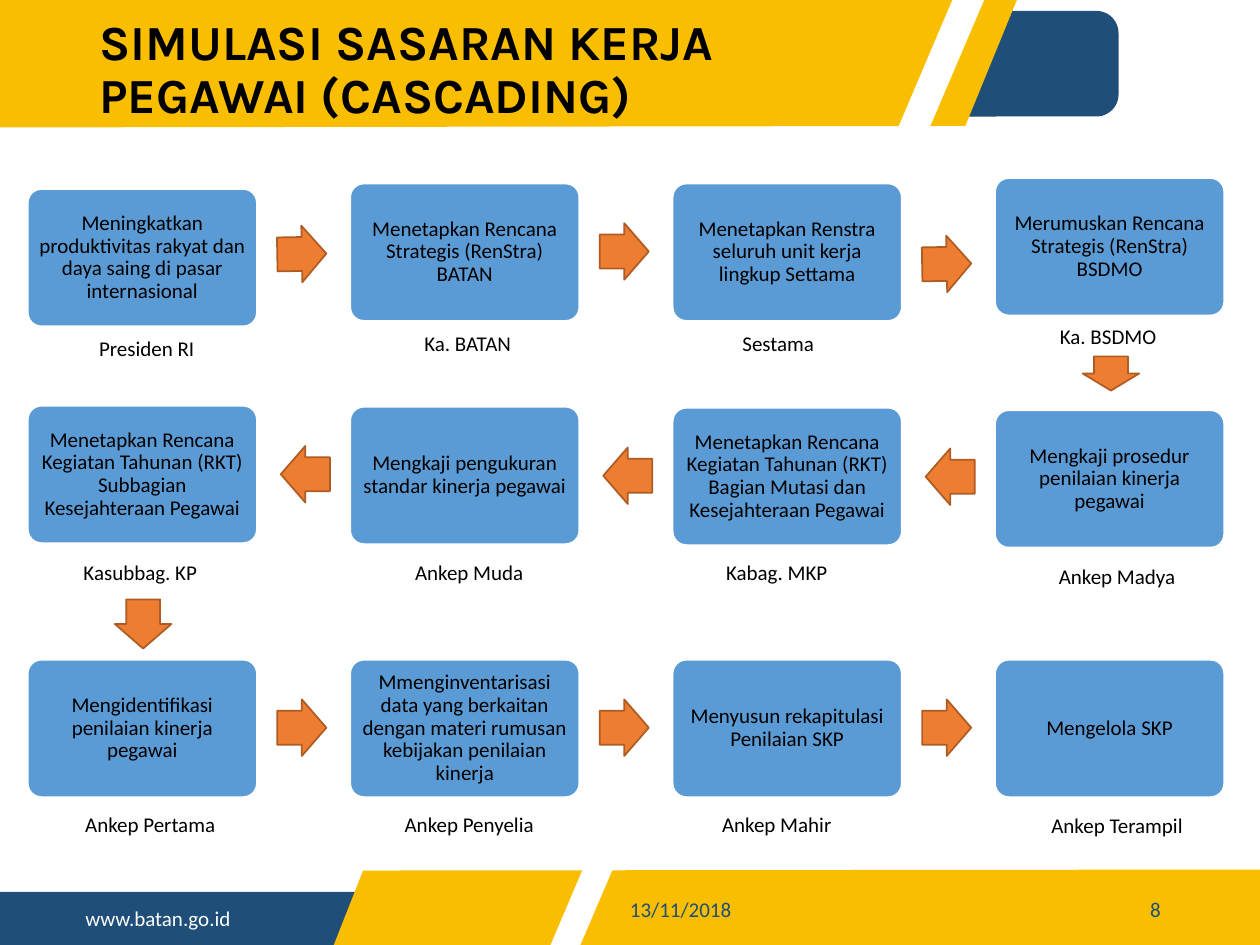
from pptx import Presentation
from pptx.dml.color import RGBColor
from pptx.enum.shapes import MSO_SHAPE
from pptx.enum.text import MSO_ANCHOR, MSO_AUTO_SIZE, PP_ALIGN
from pptx.util import Cm, Pt

ROUND, RECT = MSO_SHAPE.ROUNDED_RECTANGLE, MSO_SHAPE.RECTANGLE
ARROW = MSO_SHAPE.RIGHT_ARROW
TOP, MID = MSO_ANCHOR.TOP, MSO_ANCHOR.MIDDLE
LEFT, CENTER, RIGHT = PP_ALIGN.LEFT, PP_ALIGN.CENTER, PP_ALIGN.RIGHT


class Theme:
    navy = RGBColor.from_string("1F4E79")
    gold = RGBColor.from_string("FABE00")
    blue = RGBColor.from_string("5B9BD5")
    orange = RGBColor.from_string("ED7D31")
    rust = RGBColor.from_string("AF5C24")
    white = RGBColor.from_string("FFFFFF")
    black = RGBColor.from_string("000000")
    head, body = "Karla", "Calibri"
    head_size, body_size = Pt(28), Pt(12)


def paint(shape, fill, line=None):
    shape.shadow.inherit = False
    shape.fill.solid()
    shape.fill.fore_color.rgb = fill
    if line is None:
        shape.line.fill.background()
    else:
        shape.line.color.rgb = line
        shape.line.width = Pt(1)


def write(shape, text, align=LEFT, anchor=TOP, color=Theme.black,
          face=Theme.body, size=Theme.body_size, bold=False):
    frame = shape.text_frame
    frame.text = text
    frame.word_wrap = True
    frame.auto_size = MSO_AUTO_SIZE.NONE
    frame.vertical_anchor = anchor
    para = frame.paragraphs[0]
    para.alignment = align
    font = para.runs[0].font
    font.name, font.size, font.bold = face, size, bold
    font.color.rgb = color


deck = Presentation()
deck.slide_width, deck.slide_height = Cm(25.4), Cm(19.05)
slide = deck.slides.add_slide(deck.slide_layouts[5])
shapes = slide.shapes

# Header and footer bands, from back to front
bar = shapes.add_shape(RECT, Cm(0), Cm(17.98), Cm(7.54), Cm(1.07))
paint(bar, Theme.navy)
tab = shapes.add_shape(ROUND, Cm(17.58), Cm(0.22), Cm(4.97), Cm(2.13))
tab.adjustments[0] = 0.21
paint(tab, Theme.navy)

bands = [
    (Theme.gold, [(7.32, 17.55), (25.4, 17.53), (25.4, 19.05), (6.73, 19.05)]),
    (Theme.gold, [(0, 0), (20.5, 0), (19.46, 2.54), (0, 2.57)]),
    (Theme.white, [(19.2, 0), (19.84, 0), (11.7, 19.05), (11.1, 19.05)]),
]
for fill, spots in bands:
    first, *rest = [(Cm(x), Cm(y)) for x, y in spots]
    path = shapes.build_freeform(*first)
    path.add_line_segments(rest)
    paint(path.convert_to_shape(), fill)

notes = [
    ("www.batan.go.id", 1.47, 18.14, 5.18, 0.76, LEFT, TOP, Theme.white),
    ("13/11/2018", 12.45, 17.81, 6.17, 1.02, LEFT, MID, Theme.navy),
    ("8", 22.05, 17.81, 1.6, 1.02, RIGHT, MID, Theme.navy),
]
for text, x, y, w, h, align, anchor, color in notes:
    box = shapes.add_textbox(Cm(x), Cm(y), Cm(w), Cm(h))
    write(box, text, align, anchor, color)

# Cascade steps: column, top, task, owner, owner left, owner top
steps = [
    (0, 3.81, "Meningkatkan produktivitas rakyat dan daya saing di pasar internasional",
     "Presiden RI", 1.12, 6.63),
    (1, 3.7, "Menetapkan Rencana Strategis (RenStra) BATAN", "Ka. BATAN", 7.59, 6.53),
    (2, 3.7, "Menetapkan Renstra seluruh unit kerja lingkup Settama",
     "Sestama", 13.85, 6.53),
    (3, 3.59, "Merumuskan Rencana Strategis (RenStra) BSDMO", "Ka. BSDMO", 20.5, 6.4),
    (3, 8.27, "Mengkaji prosedur penilaian kinerja pegawai",
     "Ankep Madya", 20.68, 11.23),
    (2, 8.22, "Menetapkan Rencana Kegiatan Tahunan (RKT) Bagian Mutasi dan "
     "Kesejahteraan Pegawai", "Kabag. MKP", 13.82, 11.15),
    (1, 8.2, "Mengkaji pengukuran standar kinerja pegawai",
     "Ankep Muda", 7.62, 11.15),
    (0, 8.18, "Menetapkan Rencana Kegiatan Tahunan (RKT) Subbagian "
     "Kesejahteraan Pegawai", "Kasubbag. KP", 0.99, 11.15),
    (0, 13.3, "Mengidentifikasi penilaian kinerja pegawai",
     "Ankep Pertama", 1.19, 16.23),
    (1, 13.3, "Mmenginventarisasi data yang berkaitan dengan materi rumusan "
     "kebijakan penilaian kinerja", "Ankep Penyelia", 7.62, 16.23),
    (2, 13.3, "Menyusun rekapitulasi Penilaian SKP", "Ankep Mahir", 13.82, 16.23),
    (3, 13.3, "Mengelola SKP", "Ankep Terampil", 20.68, 16.26),
]
start, pitch = 0.56, 6.5
for col, top, task, owner, x, y in steps:
    card = shapes.add_shape(ROUND, Cm(start + pitch * col), Cm(top), Cm(4.62), Cm(2.77))
    card.adjustments[0] = 0.1
    paint(card, Theme.blue, Theme.white)
    write(card, task, CENTER, MID)
    frame = card.text_frame
    frame.margin_left = frame.margin_right = Cm(0.13)
    frame.margin_top = frame.margin_bottom = Cm(0.13)
    frame.paragraphs[0].line_spacing = 0.9
    label = shapes.add_textbox(Cm(x), Cm(y), Cm(3.68), Cm(0.76))
    write(label, owner, CENTER)

# Arrows: left, top, length, turn in degrees
gaps = [start + 5.03 + pitch * col for col in range(3)]
arrows = [(x, y, 0.99, turn)
          for x, y, turn in zip(gaps, (4.55, 4.5, 4.75), (359, 0, 359))]
arrows += [(x + 0.07, y, 0.99, 180) for x, y in zip(gaps, (8.99, 9.02, 9.04))]
arrows += [(x, 14.1, 0.99, 0) for x in gaps]
arrows += [(22.05, 6.96, 0.69, 90), (2.39, 12.01, 0.99, 90)]
for x, y, size, turn in arrows:
    arrow = shapes.add_shape(ARROW, Cm(x), Cm(y), Cm(size), Cm(1.14))
    arrow.adjustments[0], arrow.adjustments[1] = 0.6, 0.5
    arrow.rotation = turn
    paint(arrow, Theme.orange, Theme.rust)

# The title goes in front of the gold band
title = shapes.title
title.left, title.top, title.width, title.height = Cm(1.75), Cm(0.23), Cm(15.8), Cm(2.13)
write(title, "SIMULASI SASARAN KERJA PEGAWAI (CASCADING)",
      face=Theme.head, size=Theme.head_size, bold=True)
title.text_frame.paragraphs[0].line_spacing = 0.9
title.element.getparent().append(title.element)

deck.save("out.pptx")
